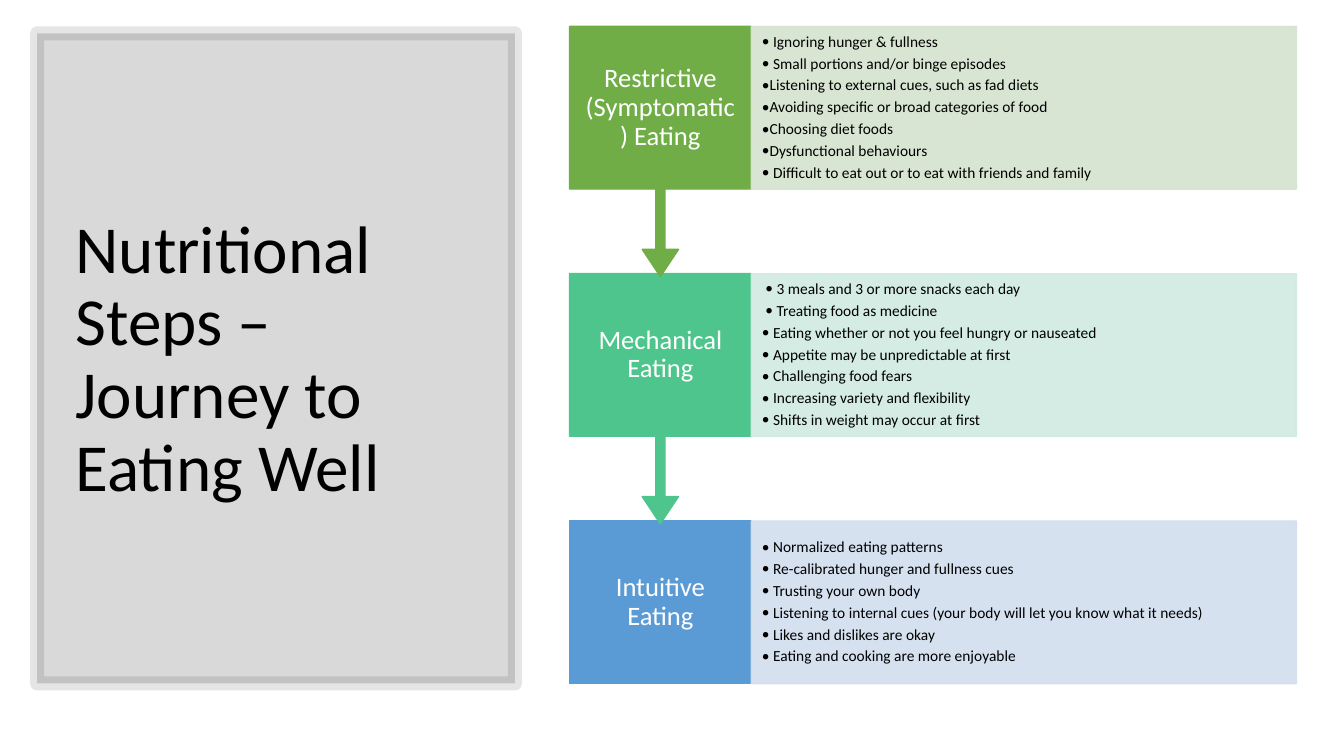
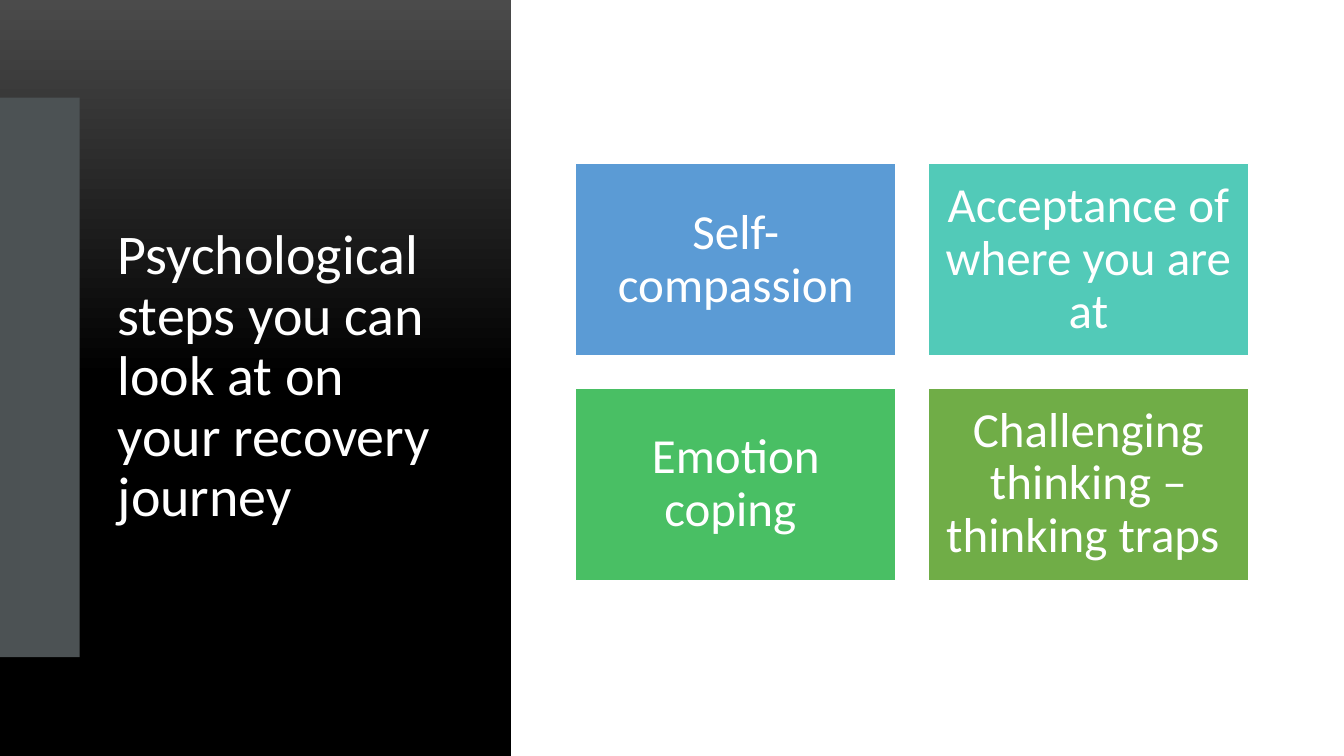
from lxml import etree
from pptx import Presentation
from pptx.dml.color import RGBColor
from pptx.enum.shapes import MSO_SHAPE
from pptx.enum.text import MSO_ANCHOR, PP_ALIGN
from pptx.oxml.ns import qn
from pptx.util import Pt

RECT = MSO_SHAPE.RECTANGLE
CALLOUT = MSO_SHAPE.DOWN_ARROW_CALLOUT
MIDDLE = MSO_ANCHOR.MIDDLE
LEFT, CENTER = PP_ALIGN.LEFT, PP_ALIGN.CENTER

FONT = "Calibri"
BLACK = RGBColor(0x00, 0x00, 0x00)
WHITE = RGBColor(0xFF, 0xFF, 0xFF)
SLATE = RGBColor(0x4C, 0x52, 0x54)
GRAY = RGBColor(0x4B, 0x4B, 0x4B)
BLUE = RGBColor(0x5B, 0x9B, 0xD5)
MINT = RGBColor(0x4D, 0xC5, 0x8D)
GREEN = RGBColor(0x70, 0xAD, 0x47)
TEAL = RGBColor(0x52, 0xCA, 0xB8)
LEAF = RGBColor(0x49, 0xBF, 0x64)
PALE_BLUE = RGBColor(0xD2, 0xDE, 0xEF)
PALE_MINT = RGBColor(0xD0, 0xEA, 0xE1)
PALE_GREEN = RGBColor(0xD5, 0xE3, 0xCF)


def add_box(slide, kind, at, fill, line=None, width=1, alphas=(100, 100)):
    """Add a filled shape; alphas are the opacities of fill and line in percent."""
    box = slide.shapes.add_shape(kind, *map(Pt, at))
    box.shadow.inherit = False
    box.fill.solid()
    box.fill.fore_color.rgb = fill
    if line is None:
        box.line.fill.background()
    else:
        box.line.width = Pt(width)
        box.line.color.rgb = line
    for color, alpha in zip(box._element.spPr.iter(qn("a:srgbClr")), alphas):
        if alpha < 100:
            etree.SubElement(color, qn("a:alpha"), val=str(alpha * 1000))
    return box


def write(box, lines, size, color, align=LEFT, pads=(7.2, 3.6), insets=(), after=0):
    """Fill a box with paragraphs; insets, if given, make them bulleted."""
    frame = box.text_frame
    frame.word_wrap = True
    frame.vertical_anchor = MIDDLE
    frame.margin_left = frame.margin_right = Pt(pads[0])
    frame.margin_top = frame.margin_bottom = Pt(pads[1])
    for i, text in enumerate(lines):
        para = frame.paragraphs[0] if i == 0 else frame.add_paragraph()
        para.text = text
        para.alignment = align
        para.line_spacing = 0.9
        para.space_after = Pt(after)
        if insets:
            props = para._p.get_or_add_pPr()
            props.set("marL", str(Pt(insets[i])))
            props.set("indent", str(-Pt(min(insets[i], 8))))
            etree.SubElement(props, qn("a:buFont"), typeface=FONT)
            etree.SubElement(props, qn("a:buChar"), char="•")
        para.font.name = FONT
        para.font.size = Pt(size)
        para.font.color.rgb = color


deck = Presentation()
deck.slide_width, deck.slide_height = Pt(960), Pt(540)
blank = deck.slide_layouts[6]

# Slide 1: three steps, joined by arrows
slide = deck.slides.add_slide(blank)
add_box(slide, RECT, (26.6, 23.8, 341.3, 464.4), BLACK, BLACK, 10, (15, 10))
title = slide.shapes.add_textbox(Pt(46.8), Pt(50.4), Pt(299.5), Pt(414))
write(title, ["Nutritional Steps –Journey to Eating Well"], 48, BLACK)

steps = [
    ("Restrictive (Symptomatic) Eating", GREEN, PALE_GREEN,
     (8, 8, 5.5, 5.5, 5.5, 5.5, 8),
     ["Ignoring hunger & fullness",
      "Small portions and/or binge episodes",
      "Listening to external cues, such as fad diets",
      "Avoiding specific or broad categories of food",
      "Choosing diet foods",
      "Dysfunctional behaviours",
      "Difficult to eat out or to eat with friends and family"]),
    ("Mechanical Eating", MINT, PALE_MINT,
     (10.5, 10.5, 8, 8, 8, 8, 8),
     ["3 meals and 3 or more snacks each day",
      "Treating food as medicine",
      "Eating whether or not you feel hungry or nauseated",
      "Appetite may be unpredictable at first",
      "Challenging food fears",
      "Increasing variety and flexibility",
      "Shifts in weight may occur at first"]),
    ("Intuitive Eating", BLUE, PALE_BLUE,
     (8, 8, 8, 8, 8, 8),
     ["Normalized eating patterns",
      "Re-calibrated hunger and fullness cues",
      "Trusting your own body",
      "Listening to internal cues (your body will let you know what it needs)",
      "Likes and dislikes are okay",
      "Eating and cooking are more enjoyable"]),
]
left, top, pitch = 406.8, 18.9, 176.6
wide, high, tall = 129.8, 116.2, 178.7
last = len(steps) - 1
# Bottom step first, so that each arrow tip lies over the step below
for i in range(last, -1, -1):
    name, dark, pale, insets, points = steps[i]
    y = top + i * pitch
    if i == last:
        label = add_box(slide, RECT, (left, y, wide, high), dark, dark)
    else:
        label = add_box(slide, CALLOUT, (left, y, wide, tall), dark, dark)
        for j, value in enumerate((0.05, 0.1, 0.15, 0.65)):
            label.adjustments[j] = value
    write(label, [name], 19, WHITE, CENTER, (9.6, 10.6))
    panel = add_box(slide, RECT, (left + wide, y, 3 * wide, high),
                    pale, pale, 1, (90, 90))
    write(panel, points, 11, BLACK, LEFT, (7.6, 10.8), insets, 3.7)

# Slide 2: four tiles
slide = deck.slides.add_slide(blank)
side = add_box(slide, RECT, (0, 0, 365, 540), BLACK)
side.fill.gradient()
side.fill.gradient_angle = 270
for stop, spot, color in zip(side.fill.gradient_stops, (0, 0.5), (GRAY, BLACK)):
    stop.position = spot
    stop.color.rgb = color
title = slide.shapes.add_textbox(Pt(77), Pt(69.8), Pt(247), Pt(399.6))
write(title, ["Psychological steps you can look at on your recovery journey"], 40, WHITE)
add_box(slide, RECT, (0, 69.8, 56.9, 399.6), SLATE)

tiles = [
    ("Self-compassion", BLUE),
    ("Acceptance of where you are at", TEAL),
    ("Emotion coping ", LEAF),
    ("Challenging thinking –thinking traps ", GREEN),
]
wide, high, gap = 229, 137.4, 22.9
for i, (text, color) in enumerate(tiles):
    row, col = divmod(i, 2)
    at = (411.1 + col * (wide + gap), 116.8 + row * (high + gap), wide, high)
    write(add_box(slide, RECT, at, color, WHITE), [text], 35, WHITE, CENTER, (10.5, 10.5))

deck.save("out.pptx")
